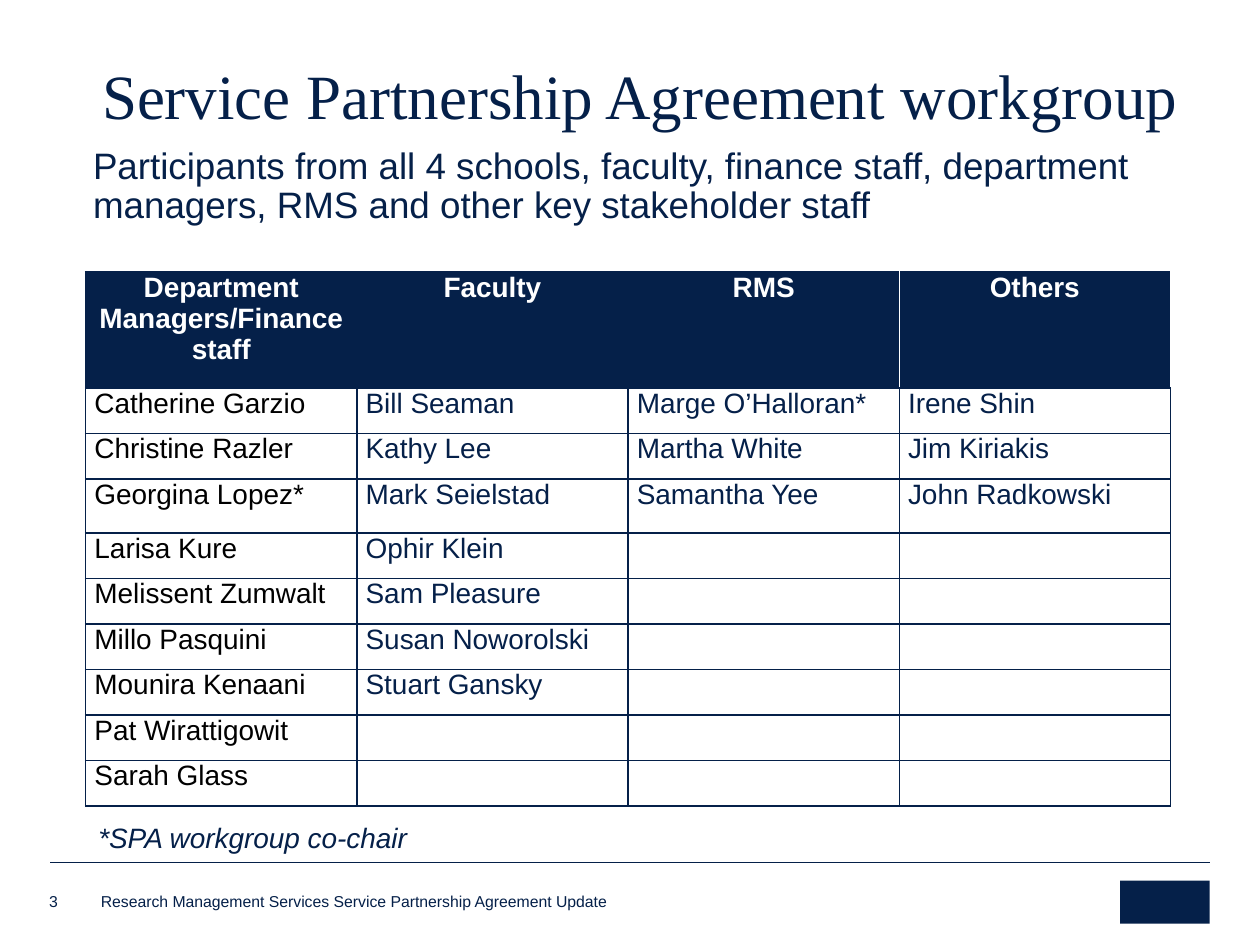
from dataclasses import dataclass

from lxml.etree import SubElement
from pptx import Presentation
from pptx.dml.color import RGBColor as RGB
from pptx.enum.shapes import MSO_CONNECTOR as Connector, MSO_SHAPE as Shape
from pptx.enum.text import MSO_ANCHOR as Anchor, PP_ALIGN as Align
from pptx.oxml import parse_xml
from pptx.oxml.ns import nsdecls, qn
from pptx.util import Inches, Pt


@dataclass(frozen=True)
class Theme:
    navy: RGB = RGB(0x05, 0x20, 0x49)
    white: RGB = RGB(0xFF, 0xFF, 0xFF)
    black: RGB = RGB(0, 0, 0)
    title_font: str = "Times New Roman"
    body_font: str = "Arial"
    title: int = 36
    intro: int = 21
    table: int = 16
    footer: int = 9


@dataclass(frozen=True)
class Label:
    text: str
    box: tuple[float, float, float, float]
    size: int
    inset: tuple[float, float] = (0, 0)
    anchor: Anchor = Anchor.TOP
    italic: bool = False
    line_spacing: float = 1.0


@dataclass(frozen=True)
class Group:
    heading: str
    members: tuple[str, ...]
    color: RGB


THEME = Theme()
TITLE = "Service Partnership Agreement workgroup"
LABELS = (
    Label("Participants from all 4 schools, faculty, finance staff, department "
          "managers, RMS and other key stakeholder staff",
          (0.64, 1.12, 8.84, 0.34), THEME.intro, inset=(0.1, 0.05), line_spacing=0.9),
    Label("*SPA workgroup co-chair", (0.78, 6.51, 7.78, 0.27), THEME.table, italic=True),
    Label("3", (0.39, 7.06, 0.27, 0.17), THEME.footer, anchor=Anchor.BOTTOM),
    Label("Research Management Services Service Partnership Agreement Update",
          (0.8, 7.08, 4.71, 0.15), THEME.footer, anchor=Anchor.BOTTOM),
)
GROUPS = (
    Group("Department Managers/Finance staff",
          ("Catherine Garzio", "Christine Razler", "Georgina Lopez*", "Larisa Kure",
           "Melissent Zumwalt", "Millo Pasquini", "Mounira Kenaani",
           "Pat Wirattigowit", "Sarah Glass"), THEME.black),
    Group("Faculty",
          ("Bill Seaman", "Kathy Lee", "Mark Seielstad", "Ophir Klein", "Sam Pleasure",
           "Susan Noworolski", "Stuart Gansky"), THEME.navy),
    Group("RMS", ("Marge O’Halloran*", "Martha White", "Samantha Yee"), THEME.navy),
    Group("Others", ("Irene Shin", "Jim Kiriakis", "John Radkowski"), THEME.navy),
)
TABLE_BOX = (0.68, 2.16, 8.61, 4.24)
HEADER_HEIGHT = 0.92
TALL_ROW, TALL_HEIGHT = 3, 0.43


def inches(box: tuple) -> list:
    return [Inches(v) for v in box]


def style_font(font, size: int, color: RGB, name: str = THEME.body_font) -> None:
    font.name = name
    font.size = Pt(size)
    font.color.rgb = color


def add_title(s, text: str) -> None:
    sp = s.shapes.title
    sp.left, sp.top, sp.width, sp.height = inches((0.71, 0.48, 8.85, 0.63))
    tf = sp.text_frame
    tf.text = text
    tf.vertical_anchor = Anchor.MIDDLE
    p = tf.paragraphs[0]
    p.alignment = Align.LEFT
    p.line_spacing = 0.85
    style_font(p.font, THEME.title, THEME.navy, THEME.title_font)


def add_label(s, label: Label) -> None:
    tf = s.shapes.add_textbox(*inches(label.box)).text_frame
    tf.word_wrap = True
    tf.vertical_anchor = label.anchor
    tf.margin_left = tf.margin_right = Inches(label.inset[0])
    tf.margin_top = tf.margin_bottom = Inches(label.inset[1])
    p = tf.paragraphs[0]
    p.text = label.text
    p.line_spacing = label.line_spacing
    p.font.italic = label.italic
    style_font(p.font, label.size, THEME.navy)


def set_borders(cell, left: RGB, right: RGB) -> None:
    tc_pr = cell._tc.get_or_add_tcPr()
    sides = {"L": left, "R": right, "T": THEME.navy, "B": THEME.navy}
    for i, (side, color) in enumerate(sides.items()):
        tc_pr.insert(i, parse_xml(
            f'<a:ln{side} {nsdecls("a")} w="12700"><a:solidFill>'
            f'<a:srgbClr val="{color}"/></a:solidFill></a:ln{side}>'))


def fill_cell(cell, text: str, color: RGB, header: bool) -> None:
    cell.margin_left = cell.margin_right = Inches(0.07)
    cell.margin_top = cell.margin_bottom = 0
    cell.fill.solid()
    cell.fill.fore_color.rgb = THEME.navy if header else THEME.white
    p = cell.text_frame.paragraphs[0]
    p.text = text
    p.alignment = Align.CENTER if header else Align.LEFT
    p.font.bold = header
    style_font(p.font, THEME.table, color)
    if not text:
        SubElement(p._p, qn("a:endParaRPr"), sz=str(THEME.table * 100))


def add_members_table(s, groups: tuple[Group, ...]) -> None:
    n_rows = 1 + max(len(g.members) for g in groups)
    tbl = s.shapes.add_table(n_rows, len(groups), *inches(TABLE_BOX)).table
    row_height = (TABLE_BOX[3] - HEADER_HEIGHT - TALL_HEIGHT) / (n_rows - 2)
    special = {0: HEADER_HEIGHT, TALL_ROW: TALL_HEIGHT}
    for i, row in enumerate(tbl.rows):
        row.height = Inches(special.get(i, row_height))
    last = len(groups) - 1
    for c, group in enumerate(groups):
        tbl.columns[c].width = Inches(TABLE_BOX[2] / len(groups))
        names = group.members + ("",) * (n_rows - 1 - len(group.members))
        for r, text in enumerate((group.heading, *names)):
            header = r == 0
            cell = tbl.cell(r, c)
            fill_cell(cell, text, THEME.white if header else group.color, header)
            set_borders(cell,
                        THEME.white if header and c == last else THEME.navy,
                        THEME.white if header and c >= last - 1 else THEME.navy)


def add_footer_rule(s) -> None:
    rule = s.shapes.add_connector(Connector.STRAIGHT, *inches((0.4, 6.84, 9.6, 6.84)))
    rule.line.color.rgb = THEME.navy
    rule.line.width = Pt(0.25)
    SubElement(rule._element.spPr, qn("a:effectLst"))


def add_emblem(s) -> None:
    sp = s.shapes.add_shape(Shape.RECTANGLE, *inches((8.89, 6.99, 0.71, 0.34)))
    sp.shadow.inherit = False
    sp.fill.solid()
    sp.fill.fore_color.rgb = THEME.navy
    sp.line.fill.background()


def main() -> None:
    prs = Presentation()
    prs.slide_width, prs.slide_height = Inches(10), Inches(7.5)
    s = prs.slides.add_slide(prs.slide_layouts[5])
    add_footer_rule(s)
    add_emblem(s)
    add_title(s, TITLE)
    add_members_table(s, GROUPS)
    for label in LABELS:
        add_label(s, label)
    prs.save("out.pptx")


if __name__ == "__main__":
    main()
